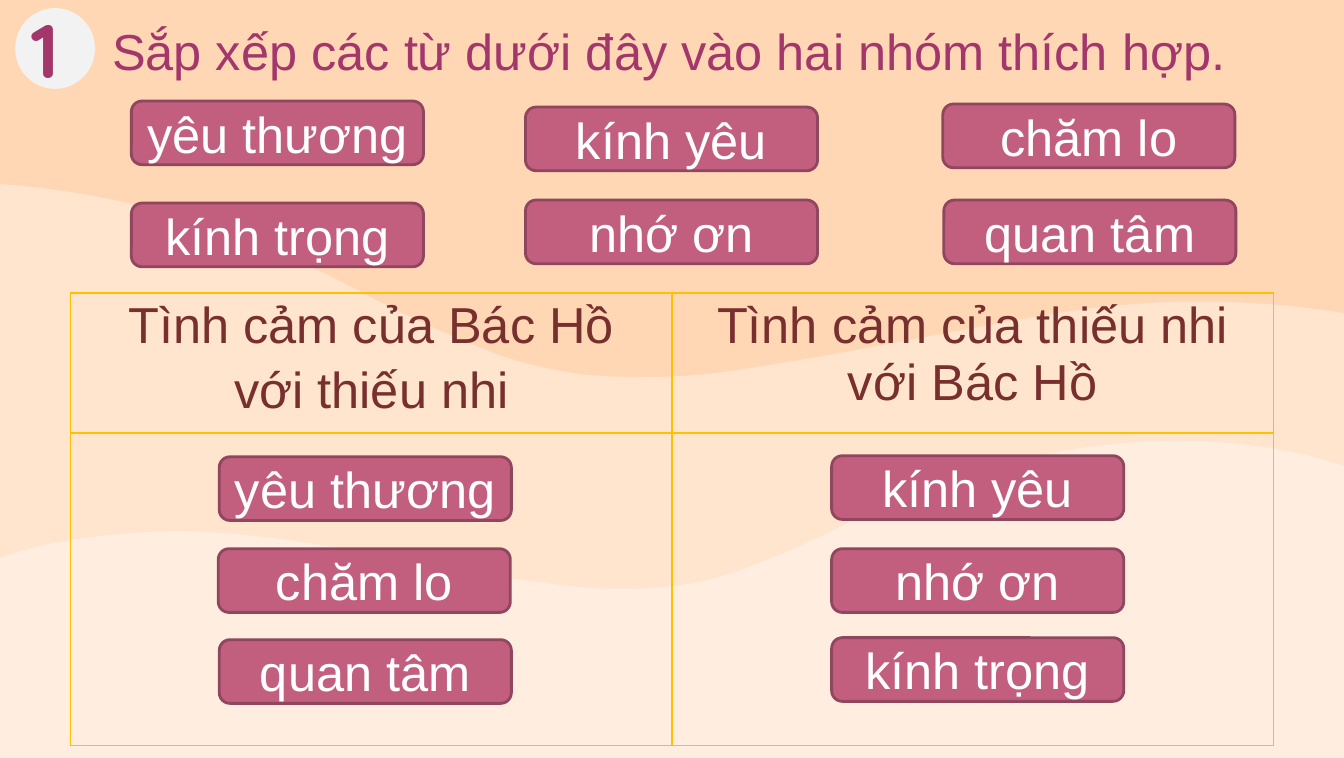
from dataclasses import dataclass

from lxml.etree import SubElement
from pptx import Presentation
from pptx.dml.color import RGBColor
from pptx.enum.shapes import MSO_SHAPE as Preset
from pptx.enum.text import MSO_ANCHOR as Anchor, PP_ALIGN as Align
from pptx.oxml import parse_xml
from pptx.oxml.ns import nsdecls, qn
from pptx.util import Inches, Pt

WIDTH, HEIGHT = 13.3, 7.5

UPPER_WAVE = [
    (0, 1.82), (0.6, 1.87), (1.33, 1.97), (2.2, 2.28), (2.7, 2.44), (3.15, 2.67),
    (3.65, 2.93), (4.07, 3.15), (4.51, 3.35), (4.98, 3.53), (5.24, 3.61), (5.51, 3.67),
    (5.8, 3.71), (6.2, 3.74), (6.6, 3.74), (7, 3.7), (7.36, 3.66), (7.73, 3.59),
    (8.1, 3.53), (8.5, 3.46), (8.92, 3.38), (9.34, 3.3), (9.84, 3.21), (10.37, 3.1),
    (10.89, 3.04), (11.4, 2.98), (11.91, 2.97), (12.42, 3), (12.72, 3.02), (13.02, 3.05),
    (WIDTH, 3.1),
]
LOWER_WAVE = [
    (0, 5.52), (0.14, 5.47), (0.29, 5.43), (0.44, 5.39), (0.74, 5.33), (1.05, 5.29),
    (1.36, 5.27), (1.77, 5.24), (2.17, 5.26), (2.57, 5.31), (2.98, 5.35), (3.4, 5.43),
    (3.8, 5.5), (4.11, 5.56), (4.42, 5.62), (4.73, 5.67), (5.04, 5.72), (5.36, 5.77),
    (5.65, 5.8), (6.2, 5.86), (6.75, 5.83), (7.25, 5.67), (7.61, 5.54), (7.96, 5.39),
    (8.3, 5.22), (8.67, 5.03), (9.06, 4.86), (9.45, 4.73), (10.13, 4.5), (10.88, 4.37),
    (11.63, 4.36), (12.2, 4.36), (12.8, 4.44), (WIDTH, 4.61),
]
WORD_BANK = [
    ("yêu thương", 1.3, 1), ("kính yêu", 5.2, 1.06), ("chăm lo", 9.33, 1.03),
    ("nhớ ơn", 5.2, 1.98), ("kính trọng", 1.3, 2.01), ("quan tâm", 9.34, 1.98),
]
SORTED_WORDS = [
    ("kính yêu", 8.23, 4.51), ("nhớ ơn", 8.23, 5.43), ("kính trọng", 8.23, 6.31),
    ("yêu thương", 2.17, 4.52), ("chăm lo", 2.16, 5.43), ("quan tâm", 2.17, 6.33),
]
GROUP_HEADINGS = [
    ["Tình cảm của Bác Hồ", "với thiếu nhi"],
    ["Tình cảm của thiếu nhi với Bác Hồ"],
]


@dataclass(frozen=True)
class Theme:
    background: str = "FFD7B5"
    wave: str = "FFFFFF"
    wave_opacity: int = 35
    badge: str = "F2F2F2"
    accent: str = "A3376C"
    button: str = "C25F7F"
    button_line: str = "90465E"
    button_text: str = "FFFFFF"
    heading: str = "78302E"
    border: str = "FFC000"
    font: str = "Arial"
    badge_font: str = "Quicksand"
    size: int = 36
    badge_size: int = 54


def curve_points(controls, steps=12):
    for i in range(0, len(controls) - 1, 3):
        segment = controls[i:i + 4]
        for step in range(1, steps + 1):
            t = step / steps
            weights = ((1 - t) ** 3, 3 * t * (1 - t) ** 2, 3 * t * t * (1 - t), t ** 3)
            yield tuple(Inches(sum(w * point[axis] for w, point in zip(weights, segment)))
                        for axis in (0, 1))


class SlideBuilder:
    def __init__(self, slide, theme):
        self.slide = slide
        self.theme = theme
        self.paint(slide.background.fill, theme.background)

    def paint(self, fill, color):
        fill.solid()
        fill.fore_color.rgb = RGBColor.from_string(color)

    def set_text(self, paragraph, text, color, align=Align.CENTER, font=None, size=None,
                 bold=False):
        paragraph.text = text
        paragraph.alignment = align
        paragraph.font.name = font or self.theme.font
        paragraph.font.size = Pt(size or self.theme.size)
        paragraph.font.bold = bold
        paragraph.font.color.rgb = RGBColor.from_string(color)

    def wave(self, controls):
        left, top = controls[0]
        builder = self.slide.shapes.build_freeform(Inches(left), Inches(top))
        corners = [(Inches(WIDTH), Inches(HEIGHT)), (0, Inches(HEIGHT))]
        builder.add_line_segments([*curve_points(controls), *corners])
        shape = builder.convert_to_shape()
        shape.shadow.inherit = False
        shape.line.fill.background()
        self.paint(shape.fill, self.theme.wave)
        color = shape._element.spPr.find(f"{qn('a:solidFill')}/{qn('a:srgbClr')}")
        SubElement(color, qn("a:alpha")).set("val", str(self.theme.wave_opacity * 1000))

    def shape(self, preset, left, top, width, height, color):
        shape = self.slide.shapes.add_shape(
            preset, Inches(left), Inches(top), Inches(width), Inches(height))
        shape.shadow.inherit = False
        shape.line.fill.background()
        self.paint(shape.fill, color)
        return shape

    def text(self, text, left, top, width, height, **style):
        box = self.slide.shapes.add_textbox(
            Inches(left), Inches(top), Inches(width), Inches(height))
        frame = box.text_frame
        frame.word_wrap = True
        frame.vertical_anchor = Anchor.MIDDLE
        frame.margin_left = frame.margin_right = Inches(0.13)
        frame.margin_top = frame.margin_bottom = Inches(0.13)
        self.set_text(frame.paragraphs[0], text, self.theme.accent, Align.JUSTIFY, **style)

    def button(self, word, left, top):
        shape = self.shape(Preset.ROUNDED_RECTANGLE, left, top, 2.89, 0.63, self.theme.button)
        self.paint(shape.line.fill, self.theme.button_line)
        shape.line.width = Pt(2)
        shape.text_frame.vertical_anchor = Anchor.MIDDLE
        self.set_text(shape.text_frame.paragraphs[0], word, self.theme.button_text)

    def border(self, cell):
        properties = cell._tc.get_or_add_tcPr()
        for index, side in enumerate(("lnL", "lnR", "lnT", "lnB")):
            properties.insert(index, parse_xml(
                f'<a:{side} {nsdecls("a")} w="{Pt(1)}"><a:solidFill>'
                f'<a:srgbClr val="{self.theme.border}"/></a:solidFill></a:{side}>'))

    def table(self, headings, left, top, column_width, row_heights):
        table = self.slide.shapes.add_table(
            len(row_heights), len(headings), Inches(left), Inches(top),
            Inches(column_width * len(headings)), Inches(sum(row_heights))).table
        table.first_row = table.horz_banding = False
        for column in table.columns:
            column.width = Inches(column_width)
        for row, height in zip(table.rows, row_heights):
            row.height = Inches(height)
        for cell in table.iter_cells():
            cell.fill.background()
            self.border(cell)
        for cell, lines in zip(table.rows[0].cells, headings):
            frame = cell.text_frame
            for index, line in enumerate(lines):
                paragraph = frame.add_paragraph() if index else frame.paragraphs[0]
                self.set_text(paragraph, line, self.theme.heading)
                paragraph.space_before = Pt(6)


def main():
    presentation = Presentation()
    presentation.slide_width = Inches(WIDTH)
    presentation.slide_height = Inches(HEIGHT)
    theme = Theme()
    builder = SlideBuilder(presentation.slides.add_slide(presentation.slide_layouts[6]), theme)

    for controls in (UPPER_WAVE, LOWER_WAVE):
        builder.wave(controls)
    builder.shape(Preset.OVAL, 0.15, 0.08, 0.79, 0.8, theme.badge)
    builder.text("1", 0.18, 0.22, 0.8, 0.52,
                 font=theme.badge_font, size=theme.badge_size, bold=True)
    builder.text("Sắp xếp các từ dưới đây vào hai nhóm thích hợp.", 0.98, 0.08, 12.3, 0.84)
    builder.table(GROUP_HEADINGS, 0.7, 2.9, 5.95, [1.31, 3.09])
    for word, left, top in WORD_BANK + SORTED_WORDS:
        builder.button(word, left, top)

    presentation.save("out.pptx")


if __name__ == "__main__":
    main()
